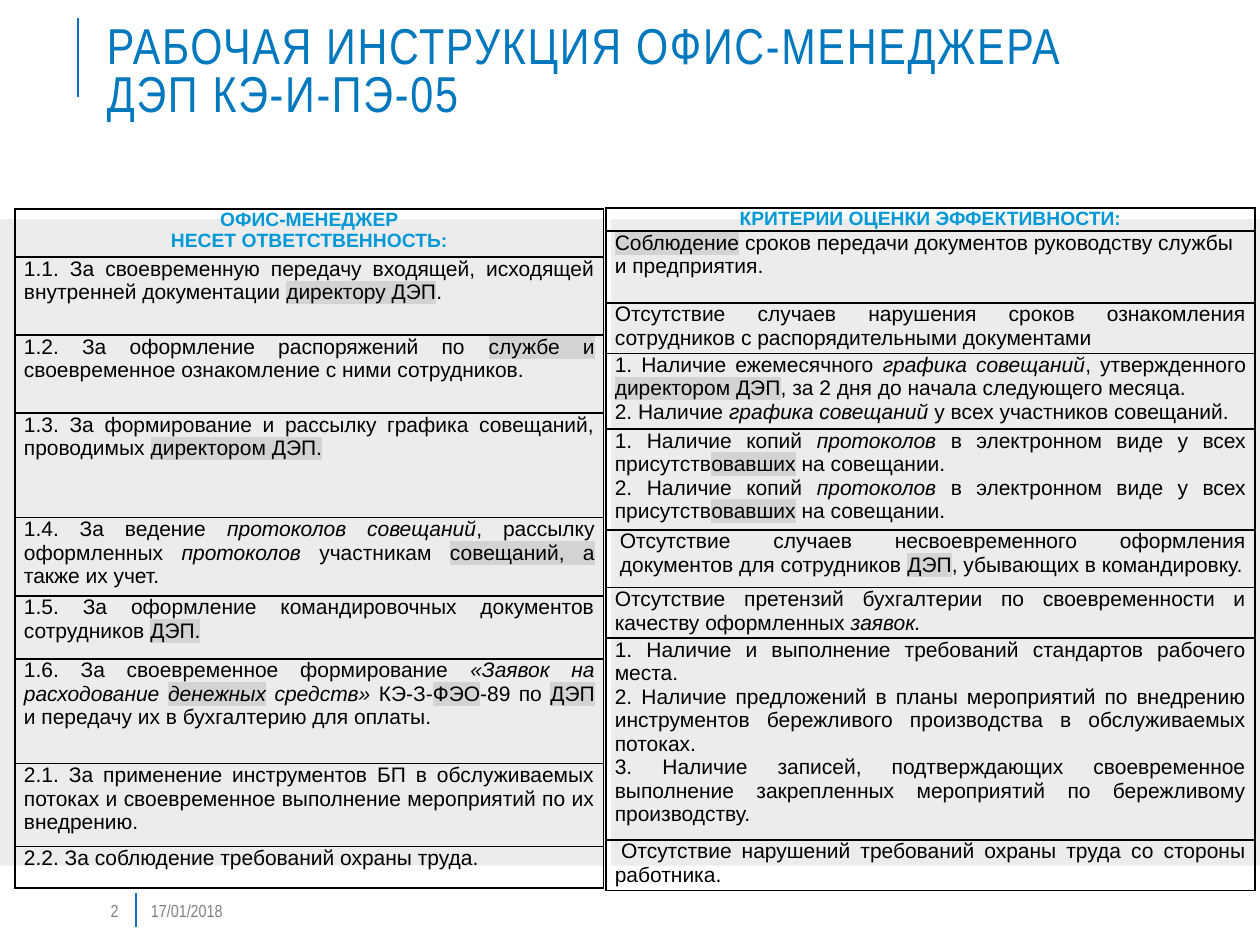
from lxml import etree
from pptx import Presentation
from pptx.dml.color import RGBColor
from pptx.enum.shapes import MSO_CONNECTOR, MSO_SHAPE
from pptx.enum.text import MSO_ANCHOR, PP_ALIGN
from pptx.oxml import parse_xml
from pptx.oxml.ns import nsdecls, qn
from pptx.util import Inches, Pt

LINE = MSO_CONNECTOR.STRAIGHT
RECT = MSO_SHAPE.RECTANGLE
MIDDLE = MSO_ANCHOR.MIDDLE
LEFT, CENTER, JUSTIFY = PP_ALIGN.LEFT, PP_ALIGN.CENTER, PP_ALIGN.JUSTIFY

ACCENT = RGBColor(0x0F, 0x6F, 0xC6)
TITLE = RGBColor(0x00, 0x78, 0xBD)
HEADING = RGBColor(0x00, 0x98, 0xD6)
BLACK = RGBColor(0x00, 0x00, 0x00)
GRAY = RGBColor(0x80, 0x80, 0x80)
PANEL = RGBColor(0xE0, 0xE0, 0xE0)
MARK = RGBColor(0xD3, 0xD3, 0xD3)

DUTIES = [
    (0.38, "ОФИС-МЕНЕДЖЕР\nНЕСЕТ ОТВЕТСТВЕННОСТЬ:"),
    (0.62, "1.1. За своевременную передачу входящей, исходящей внутренней "
           "документации [директору ДЭП]."),
    (0.62, "1.2. За оформление распоряжений по [службе и] своевременное "
           "ознакомление с ними сотрудников."),
    (0.83, "1.3. За формирование и рассылку графика совещаний, проводимых "
           "[директором ДЭП.]"),
    (0.62, "1.4. За ведение _протоколов совещаний_, рассылку оформленных "
           "_протоколов_ участникам [совещаний, а] также их учет."),
    (0.5, "1.5. За оформление командировочных документов сотрудников [ДЭП.]"),
    (0.83, "1.6. За своевременное формирование _«Заявок на расходование "
           "[денежных] средств»_ КЭ-З-[ФЭО]-89 по [ДЭП] и передачу их в "
           "бухгалтерию для оплаты."),
    (0.66, "2.1. За применение инструментов БП в обслуживаемых потоках и "
           "своевременное выполнение мероприятий по их внедрению."),
    (0.33, "2.2. За соблюдение требований охраны труда."),
]
CRITERIA = [
    (0.17, "КРИТЕРИИ ОЦЕНКИ ЭФФЕКТИВНОСТИ:"),
    (0.57, "[Соблюдение] сроков передачи документов руководству службы и "
           "предприятия."),
    (0.37, "Отсутствие случаев нарушения сроков ознакомления сотрудников с "
           "распорядительными документами"),
    (0.58, "1. Наличие ежемесячного _графика совещаний_, утвержденного "
           "[директором ДЭП], за 2 дня до начала следующего месяца.\n"
           "2. Наличие _графика совещаний_ у всех участников совещаний."),
    (0.75, "\n".join(f"{n}. Наличие копий _протоколов_ в электронном виде у "
                     "всех присутств[овавших] на совещании." for n in (1, 2))),
    (0.46, "Отсутствие случаев несвоевременного оформления документов для "
           "сотрудников [ДЭП], убывающих в командировку."),
    (0.37, "Отсутствие претензий бухгалтерии по своевременности и качеству "
           "оформленных _заявок._"),
    (1.5, "1. Наличие и выполнение требований стандартов рабочего места.\n"
          "2. Наличие предложений в планы мероприятий по внедрению "
          "инструментов бережливого производства в обслуживаемых потоках.\n"
          "3. Наличие записей, подтверждающих своевременное выполнение "
          "закрепленных мероприятий по бережливому производству."),
    (0.37, "Отсутствие нарушений требований охраны труда со стороны "
           "работника."),
]


def style(p, name, size, color):
    """Set the shared font of a paragraph."""
    p.font.name, p.font.size = name, Pt(size)
    p.font.color.rgb = color


def add_rule(s, x, top, bottom):
    """Draw a vertical accent line."""
    cxn = s.shapes.add_connector(LINE, Inches(x), Inches(bottom), Inches(x), Inches(top))
    cxn.line.color.rgb, cxn.line.width = ACCENT, Pt(1.5)
    etree.SubElement(cxn._element.spPr, qn("a:effectLst"))


def add_panel(s, x, y, w, h):
    """Draw a translucent backing panel."""
    sp = s.shapes.add_shape(RECT, Inches(x), Inches(y), Inches(w), Inches(h))
    sp.shadow.inherit = False
    sp.line.fill.background()
    sp.fill.solid()
    sp.fill.fore_color.rgb = PANEL
    color = sp._element.spPr.find(".//" + qn("a:srgbClr"))
    etree.SubElement(color, qn("a:alpha"), val="60000")


def add_label(s, x, y, w, h, text, size, color):
    """Place a vertically centred narrow text and return its paragraph."""
    tf = s.shapes.add_textbox(Inches(x), Inches(y), Inches(w), Inches(h)).text_frame
    tf.word_wrap, tf.vertical_anchor = True, MIDDLE
    p = tf.paragraphs[0]
    p.text = text
    style(p, "Arial Narrow", size, color)
    return p


def add_title(s, x, y, w, h):
    """Place the slide title with its accent line."""
    add_rule(s, 0.62, 0.14, 0.77)
    p = add_label(s, x, y, w, h, "РАБОЧАЯ ИНСТРУКЦИЯ ОФИС-МЕНЕДЖЕРА\vДЭП КЭ-И-ПЭ-05",
                  28.8, TITLE)
    p.line_spacing = 0.8
    for r in p.runs:
        r.font._element.set("spc", "100")


def add_footer(s, y, h):
    """Place the page number, divider and date."""
    add_rule(s, 1.08, 7.09, 7.36)
    add_label(s, 0.78, y, 0.28, h, "2", 10, GRAY)
    add_label(s, 1.1, y, 1.77, h, "17/01/2018", 10, GRAY)


def add_marked_runs(p, text):
    """Add runs where _ toggles italics and [ ] encloses a highlight."""
    italic = marked = False
    part = ""
    for ch in text + "]":
        if ch not in "_[]":
            part += ch
            continue
        if part:
            r = p.add_run()
            r.text = part
            if italic:
                r.font.italic = True
            if marked:
                r.font._element.append(parse_xml(
                    f'<a:highlight {nsdecls("a")}><a:srgbClr val="{MARK}"/></a:highlight>'))
        part = ""
        if ch == "_":
            italic = not italic
        else:
            marked = ch == "["


def format_cell(cell):
    """Clear the fill, set the insets and draw black borders."""
    cell.margin_left = cell.margin_right = Inches(0.07)
    cell.margin_top = cell.margin_bottom = 0
    cell.fill.background()
    for i, side in enumerate(("lnL", "lnR", "lnT", "lnB")):
        cell._tc.tcPr.insert(i, parse_xml(
            f'<a:{side} {nsdecls("a")} w="12700"><a:solidFill>'
            f'<a:srgbClr val="{BLACK}"/></a:solidFill></a:{side}>'))


def add_list_table(s, x, y, w, rows, left_row=None, indents=None):
    """Place a one-column table with a heading row."""
    total = sum(height for height, _ in rows)
    table = s.shapes.add_table(len(rows), 1, Inches(x), Inches(y),
                               Inches(w), Inches(total)).table
    for i, (height, text) in enumerate(rows):
        table.rows[i].height = Inches(height)
        cell = table.cell(i, 0)
        format_cell(cell)
        tf = cell.text_frame
        for j, line in enumerate(text.split("\n")):
            p = tf.add_paragraph() if j else tf.paragraphs[0]
            add_marked_runs(p, line)
            if i == 0:
                p.alignment = CENTER
                style(p, "Arial", 11, HEADING)
                p.font.bold = True
            else:
                p.alignment = LEFT if i == left_row else JUSTIFY
                style(p, "Arial", 12, BLACK)
                p.font.bold = False
            for key, value in (indents or {}).get(i, {}).items():
                p._p.get_or_add_pPr().set(key, str(Inches(value)))


def main():
    """Build and save the slide."""
    prs = Presentation()
    prs.slide_width, prs.slide_height = Inches(10), Inches(7.5)
    s = prs.slides.add_slide(prs.slide_layouts[6])
    add_panel(s, 4.85, 1.74, 5.15, 5.13)
    add_panel(s, 0, 1.74, 4.79, 5.13)
    add_title(s, 0.75, 0.21, 9.13, 0.76)
    add_footer(s, 7.08, 0.3)
    add_list_table(s, 0.12, 1.66, 4.67, DUTIES)
    add_list_table(s, 4.81, 1.65, 5.15, CRITERIA, left_row=1,
                   indents={5: {"marL": 0.04}, 8: {"indent": 0.05}})
    prs.save("out.pptx")


if __name__ == "__main__":
    main()
